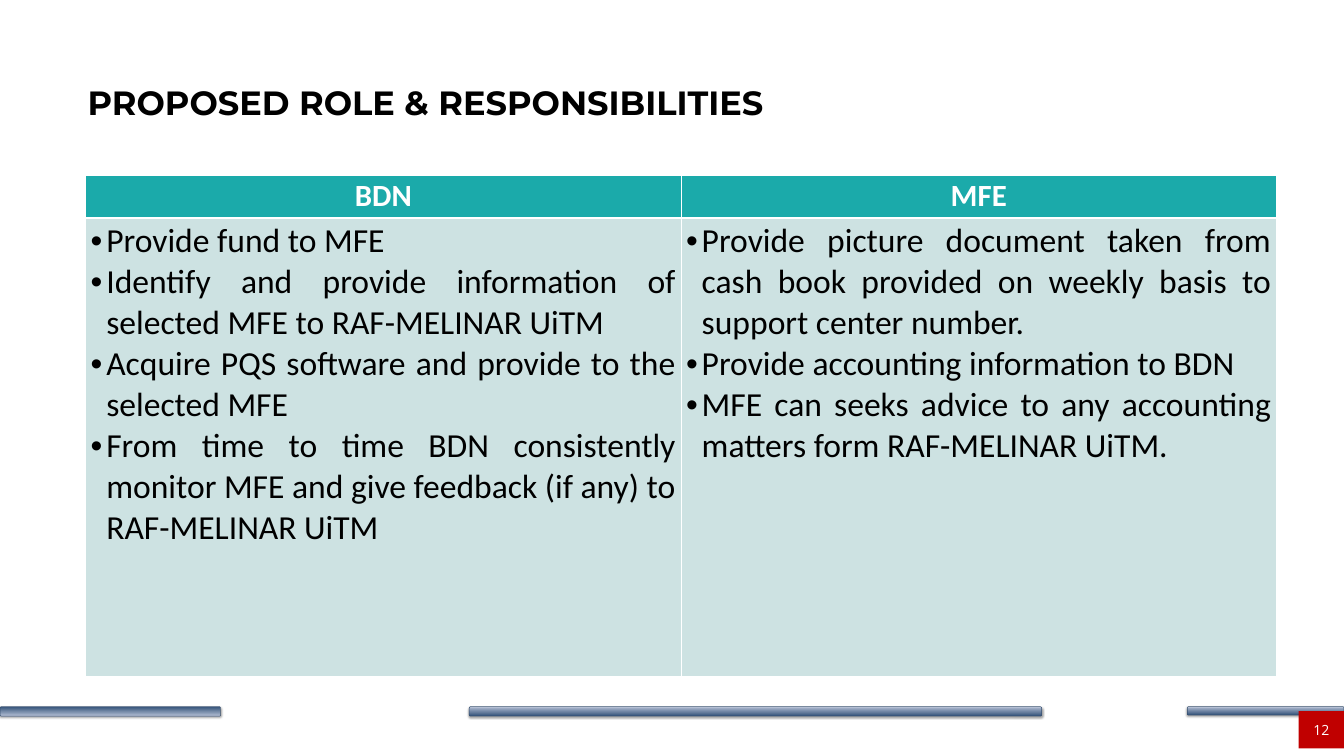
from pptx import Presentation
from pptx.dml.color import RGBColor
from pptx.enum.shapes import MSO_SHAPE
from pptx.enum.text import MSO_ANCHOR, PP_ALIGN
from pptx.oxml import parse_xml
from pptx.oxml.ns import nsdecls, qn
from pptx.util import Inches, Pt

ROUND, RECT = MSO_SHAPE.ROUNDED_RECTANGLE, MSO_SHAPE.RECTANGLE
MIDDLE = MSO_ANCHOR.MIDDLE
LEFT, CENTER, JUSTIFY = PP_ALIGN.LEFT, PP_ALIGN.CENTER, PP_ALIGN.JUSTIFY


class Theme:
    white, black = "FFFFFF", "000000"
    head, body, badge = "1BAAAA", "CDE2E2", "C00000"
    bar_dark, bar_light, bar_line = "325178", "B4BFD4", "37506F"
    title_font, body_font, number_font = "Montserrat", "Calibri", "Open Sans"
    title_size, head_size, body_size, number_size = 48, 44, 48, 20


def rgb(value):
    return RGBColor.from_string(value)


def write(tf, lines, size, font, color, bold=False, align=LEFT, bullet=None,
          insets=(0.1, 0.05), anchor=None):
    """Fill a text frame, one paragraph per line."""
    tf.word_wrap = True
    tf.margin_left = tf.margin_right = Inches(insets[0])
    tf.margin_top = tf.margin_bottom = Inches(insets[1])
    if anchor is not None:
        tf.vertical_anchor = anchor
    for i, line in enumerate(lines):
        p = tf.add_paragraph() if i else tf.paragraphs[0]
        p.alignment = align
        if bullet:
            pPr = p._p.get_or_add_pPr()
            pPr.set("marL", str(Inches(0.31)))
            pPr.set("indent", str(-Inches(0.31)))
            pPr.append(parse_xml(f'<a:buFont {nsdecls("a")} typeface="Arial"/>'))
            pPr.append(parse_xml(f'<a:buChar {nsdecls("a")} char="{bullet}"/>'))
        r = p.add_run()
        r.text = line
        r.font.size, r.font.name, r.font.bold = Pt(size), font, bold
        r.font.color.rgb = rgb(color)


class Deck:
    def __init__(self, theme):
        self.theme = theme
        self.prs = Presentation()
        self.prs.slide_width, self.prs.slide_height = Inches(26.67), Inches(15)
        self.s = self.prs.slides.add_slide(self.prs.slide_layouts[6])

    def shape(self, kind, box):
        sp = self.s.shapes.add_shape(kind, *map(Inches, box))
        sp.shadow.inherit = False
        return sp

    def bar(self, x, width, height, flip):
        t = self.theme
        sp = self.shape(ROUND, (x, 14.02, width, height))
        sp.rotation = 180
        spPr = sp._element.spPr
        if flip:
            spPr.find(qn("a:xfrm")).set("flipV", "1")
        sp.fill.gradient()
        sp.fill.gradient_angle = 90
        for stop, color in zip(sp.fill.gradient_stops, (t.bar_dark, t.bar_light)):
            stop.color.rgb = rgb(color)
        sp.line.color.rgb, sp.line.width = rgb(t.bar_line), Pt(0.75)
        spPr.find(qn("a:effectLst")).append(parse_xml(
            f'<a:outerShdw {nsdecls("a")} blurRad="{Pt(3.1)}" dist="{Pt(1.8)}" '
            f'dir="5400000" rotWithShape="0"><a:srgbClr val="{t.black}">'
            '<a:alpha val="35000"/></a:srgbClr></a:outerShdw>'))

    def badge(self, box, text):
        t = self.theme
        sp = self.shape(RECT, box)
        sp.fill.solid()
        sp.fill.fore_color.rgb = rgb(t.badge)
        sp.line.fill.background()
        write(sp.text_frame, [text], t.number_size, t.number_font, t.white,
              align=CENTER, insets=(0, 0.2), anchor=MIDDLE)

    def title(self, box, text):
        t = self.theme
        tb = self.s.shapes.add_textbox(*map(Inches, box))
        write(tb.text_frame, [text], t.title_size, t.title_font, t.black,
              bold=True, insets=(0.24, 0.12), anchor=MIDDLE)

    def cell(self, cell, lines, fill, bottom, **fmt):
        write(cell.text_frame, lines, font=self.theme.body_font,
              insets=(0, 0), **fmt)
        cell.margin_left = cell.margin_right = Inches(0.1)
        cell.margin_top = cell.margin_bottom = Inches(0.05)
        tcPr = cell._tc.get_or_add_tcPr()
        for side, width in zip("LRTB", (1, 1, bottom if fill == self.theme.body else 1, bottom)):
            tcPr.append(parse_xml(
                f'<a:ln{side} {nsdecls("a")} w="{Pt(width)}"><a:solidFill>'
                f'<a:srgbClr val="{self.theme.white}"/></a:solidFill></a:ln{side}>'))
        cell.fill.solid()
        cell.fill.fore_color.rgb = rgb(fill)

    def table(self, box, row_heights, columns):
        t = self.theme
        tbl = self.s.shapes.add_table(2, len(columns), *map(Inches, box)).table
        tbl.first_row = tbl.horz_banding = False
        for row, height in zip(tbl.rows, row_heights):
            row.height = Inches(height)
        for i, (heading, points) in enumerate(columns.items()):
            self.cell(tbl.cell(0, i), [heading], t.head, 3, size=t.head_size,
                      color=t.white, bold=True, align=CENTER)
            self.cell(tbl.cell(1, i), points, t.body, 1, size=t.body_size,
                      color=t.black, align=JUSTIFY, bullet="•")


ROLES = {
    "BDN": [
        "Provide fund to MFE",
        "Identify and provide information of selected MFE to RAF-MELINAR UiTM",
        "Acquire PQS software and provide to the selected MFE",
        "From time to time BDN consistently monitor MFE and give feedback "
        "(if any) to RAF-MELINAR UiTM",
    ],
    "MFE": [
        "Provide picture document taken from cash book provided on weekly "
        "basis to support center number.",
        "Provide accounting information to BDN",
        "MFE can seeks advice to any accounting matters form RAF-MELINAR UiTM.",
    ],
}


def main():
    deck = Deck(Theme)
    # Footer bars and slide number
    for bar in ((0, 4.38, 0.19, False), (23.56, 3.11, 0.17, True),
                (9.31, 11.36, 0.19, True)):
        deck.bar(*bar)
    deck.badge((25.77, 14.11, 0.9, 0.74), "12")
    # Title and roles
    deck.title((1.5, 0.77, 24, 2.5), "PROPOSED ROLE & RESPONSIBILITIES")
    deck.table((1.7, 3.47, 23.63, 9.93), (0.86, 9.08), ROLES)
    deck.prs.save("out.pptx")


if __name__ == "__main__":
    main()
